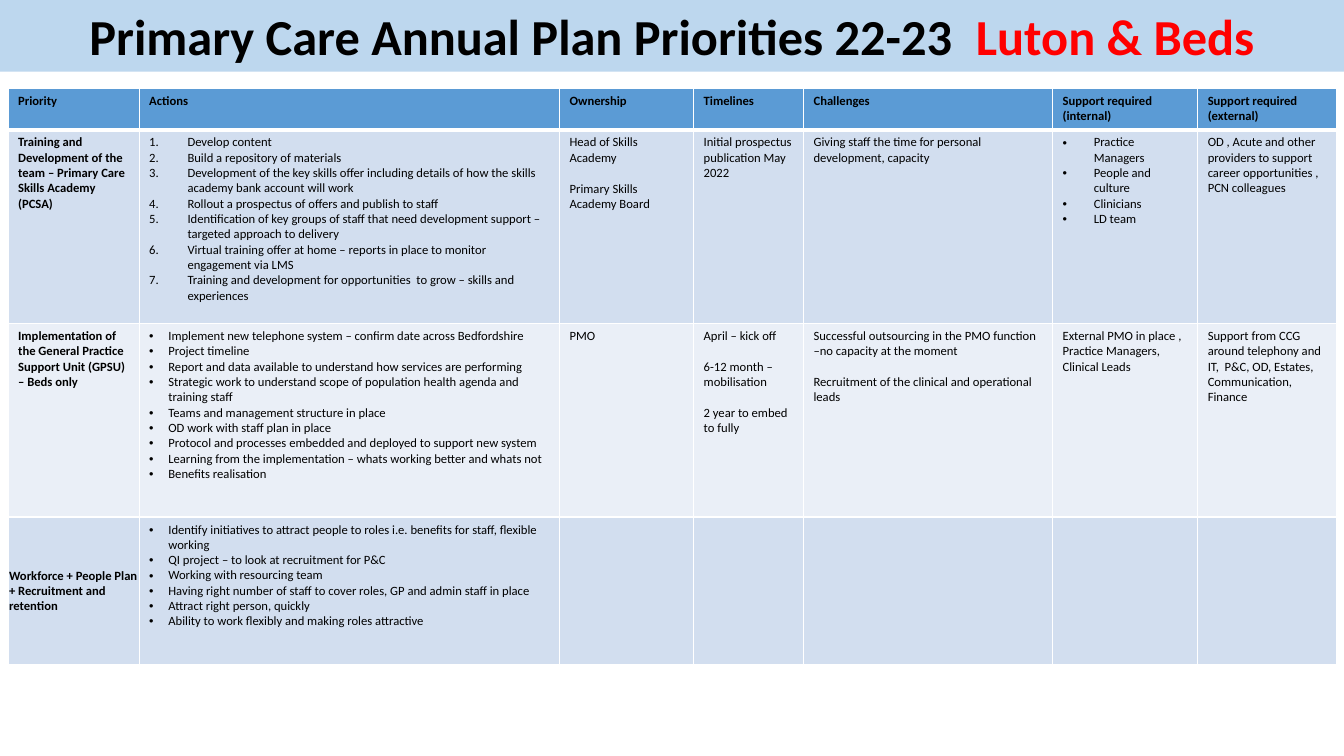
from dataclasses import dataclass
from enum import Enum
from typing import Optional

from lxml.etree import SubElement
from pptx import Presentation
from pptx.dml.color import RGBColor
from pptx.enum.text import MSO_ANCHOR, MSO_AUTO_SIZE, PP_ALIGN
from pptx.oxml.ns import qn
from pptx.util import Inches, Pt


@dataclass(frozen=True)
class Theme:
    font: str = "Calibri"
    title_size: int = 36
    body_size: int = 9
    paragraph_gap: int = 11
    ink: str = "000000"
    region: str = "FF0000"
    banner: str = "BDD7EE"
    header: str = "5B9BD5"
    band_dark: str = "D2DEEF"
    band_light: str = "EAEFF7"
    rule: str = "FFFFFF"


THEME = Theme()


class Marker(Enum):
    NONE = ""
    BULLET = "•"
    NUMBER = "arabicPeriod"


@dataclass(frozen=True)
class Entry:
    """Paragraphs of one table cell, with their list marker and hanging indent."""
    lines: tuple[str, ...]
    marker: Marker = Marker.NONE
    indent: float = 0


@dataclass(frozen=True)
class Priority:
    entries: tuple[Entry, ...]
    height: float
    fill: str
    tight_label: bool = False


def plain(*lines: str) -> Entry:
    return Entry(lines)


def bullets(*lines: str, indent: float = 0.19) -> Entry:
    return Entry(lines, Marker.BULLET, indent)


def numbered(*lines: str) -> Entry:
    return Entry(lines, Marker.NUMBER, 0.38)


COLUMN_WIDTHS = (1.3, 4.17, 1.33, 1.09, 2.47, 1.44, 1.38)
HEADINGS = ("Priority", "Actions", "Ownership", "Timelines", "Challenges",
            "Support required (internal)", "Support required (external)")

ROWS = (
    Priority(tuple(plain(heading) for heading in HEADINGS), 0.41, THEME.header),
    Priority((
        plain("Training and Development of the team – Primary Care Skills Academy (PCSA)"),
        numbered(
            "Develop content",
            "Build a repository of materials",
            "Development of the key skills offer including details of how the skills "
            "academy bank account will work",
            "Rollout a prospectus of offers and publish to staff",
            "Identification of key groups of staff that need development support – "
            "targeted approach to delivery",
            "Virtual training offer at home – reports in place to monitor engagement via LMS",
            "Training and development for opportunities  to grow – skills and experiences"),
        plain("Head of Skills Academy", "Primary Skills Academy Board"),
        plain("Initial prospectus publication May  2022"),
        plain("Giving staff the time for personal development, capacity"),
        bullets("Practice Managers", "People and culture", "Clinicians", "LD team",
                indent=0.31),
        plain("OD , Acute and other providers to support career opportunities , "
              "PCN colleagues"),
    ), 1.92, THEME.band_dark),
    Priority((
        plain("Implementation of the General Practice Support Unit (GPSU) – Beds only"),
        bullets(
            "Implement new telephone system – confirm date across Bedfordshire",
            "Project timeline",
            "Report and data available to understand how services are performing",
            "Strategic work to understand scope of population health agenda and "
            "training staff",
            "Teams and management structure in place",
            "OD work with staff plan in place",
            "Protocol and processes embedded and deployed to support new system",
            "Learning from the implementation – whats working better and whats not",
            "Benefits realisation"),
        plain("PMO"),
        plain("April – kick off", "6-12 month – mobilisation", "2 year to embed to fully"),
        plain("Successful outsourcing in the PMO function –no capacity at the moment",
              "Recruitment of the clinical and operational leads"),
        plain("External PMO in place , Practice Managers, Clinical Leads"),
        plain("Support from CCG around telephony and IT,  P&C, OD, Estates, "
              "Communication, Finance"),
    ), 1.92, THEME.band_light),
    Priority((
        plain("Workforce + People Plan + Recruitment and retention"),
        bullets(
            "Identify initiatives to attract people to roles i.e. benefits for staff, "
            "flexible working",
            "QI project – to look at recruitment for P&C",
            "Working with resourcing team",
            "Having right number of staff to cover roles, GP and admin staff in place",
            "Attract right person, quickly",
            "Ability to work flexibly and making roles attractive"),
        *(plain("") for _ in range(5)),
    ), 1.46, THEME.band_dark, tight_label=True),
)


def style_font(font, size: int, bold: bool, color: Optional[str] = None) -> None:
    font.name, font.size, font.bold = THEME.font, Pt(size), bold
    if color:
        font.color.rgb = RGBColor.from_string(color)


def add_marker(paragraph, marker: Marker, indent: float) -> None:
    properties = paragraph._p.get_or_add_pPr()
    properties.set("marL", str(Inches(indent)))
    properties.set("indent", str(-Inches(indent)))
    if marker is Marker.BULLET:
        SubElement(properties, qn("a:buFont"), typeface="Arial")
        SubElement(properties, qn("a:buChar"), char=marker.value)
    else:
        SubElement(properties, qn("a:buFont"), typeface="+mj-lt")
        SubElement(properties, qn("a:buAutoNum"), type=marker.value)


def add_borders(cell, top: int, bottom: int) -> None:
    properties = cell._tc.get_or_add_tcPr()
    for side, points in (("L", 1), ("R", 1), ("T", top), ("B", bottom)):
        line = SubElement(properties, qn(f"a:ln{side}"), w=str(Pt(points)))
        fill = SubElement(line, qn("a:solidFill"))
        SubElement(fill, qn("a:srgbClr"), val=THEME.rule)


def fill_cell(cell, entry: Entry, color: str, bold: bool) -> None:
    cell.fill.solid()
    cell.fill.fore_color.rgb = RGBColor.from_string(color)
    frame = cell.text_frame
    for index, line in enumerate(entry.lines):
        paragraph = frame.add_paragraph() if index else frame.paragraphs[0]
        paragraph.text = line
        if entry.marker is not Marker.NONE:
            add_marker(paragraph, entry.marker, entry.indent)
        elif index:
            paragraph.space_before = Pt(THEME.paragraph_gap)
        style_font(paragraph.font, THEME.body_size, bold, THEME.ink)


def add_title(slide) -> None:
    title = slide.shapes.title
    title.left, title.top = Inches(0), Inches(0)
    title.width, title.height = Inches(13.33), Inches(0.71)
    title.fill.solid()
    title.fill.fore_color.rgb = RGBColor.from_string(THEME.banner)
    frame = title.text_frame
    frame.auto_size = MSO_AUTO_SIZE.NONE
    frame.vertical_anchor = MSO_ANCHOR.MIDDLE
    heading = frame.paragraphs[0]
    heading.alignment = PP_ALIGN.CENTER
    style_font(heading.font, THEME.title_size, True)
    for words, color in (("Primary Care Annual Plan Priorities 22-23  ", THEME.ink),
                         ("Luton & Beds", THEME.region)):
        run = heading.add_run()
        run.text = words
        run.font.color.rgb = RGBColor.from_string(color)


def add_priorities(slide) -> None:
    table = slide.shapes.add_table(
        len(ROWS), len(COLUMN_WIDTHS), Inches(0.08), Inches(0.88),
        Inches(sum(COLUMN_WIDTHS)), Inches(sum(row.height for row in ROWS))).table
    for column, width in zip(table.columns, COLUMN_WIDTHS):
        column.width = Inches(width)
    for r, row in enumerate(ROWS):
        table.rows[r].height = Inches(row.height)
        for c, entry in enumerate(row.entries):
            cell = table.cell(r, c)
            add_borders(cell, top=3 if r == 1 else 1, bottom=3 if r == 0 else 1)
            fill_cell(cell, entry, row.fill, bold=r == 0 or c == 0)
        if row.tight_label:
            label = table.cell(r, 0)
            label.vertical_anchor = MSO_ANCHOR.MIDDLE
            label.margin_left = label.margin_right = label.margin_top = Inches(0.01)
            label.margin_bottom = Inches(0)


def main() -> None:
    deck = Presentation()
    deck.slide_width, deck.slide_height = Inches(13.33), Inches(7.5)
    slide = deck.slides.add_slide(deck.slide_layouts[5])
    add_title(slide)
    add_priorities(slide)
    deck.save("out.pptx")


if __name__ == "__main__":
    main()
